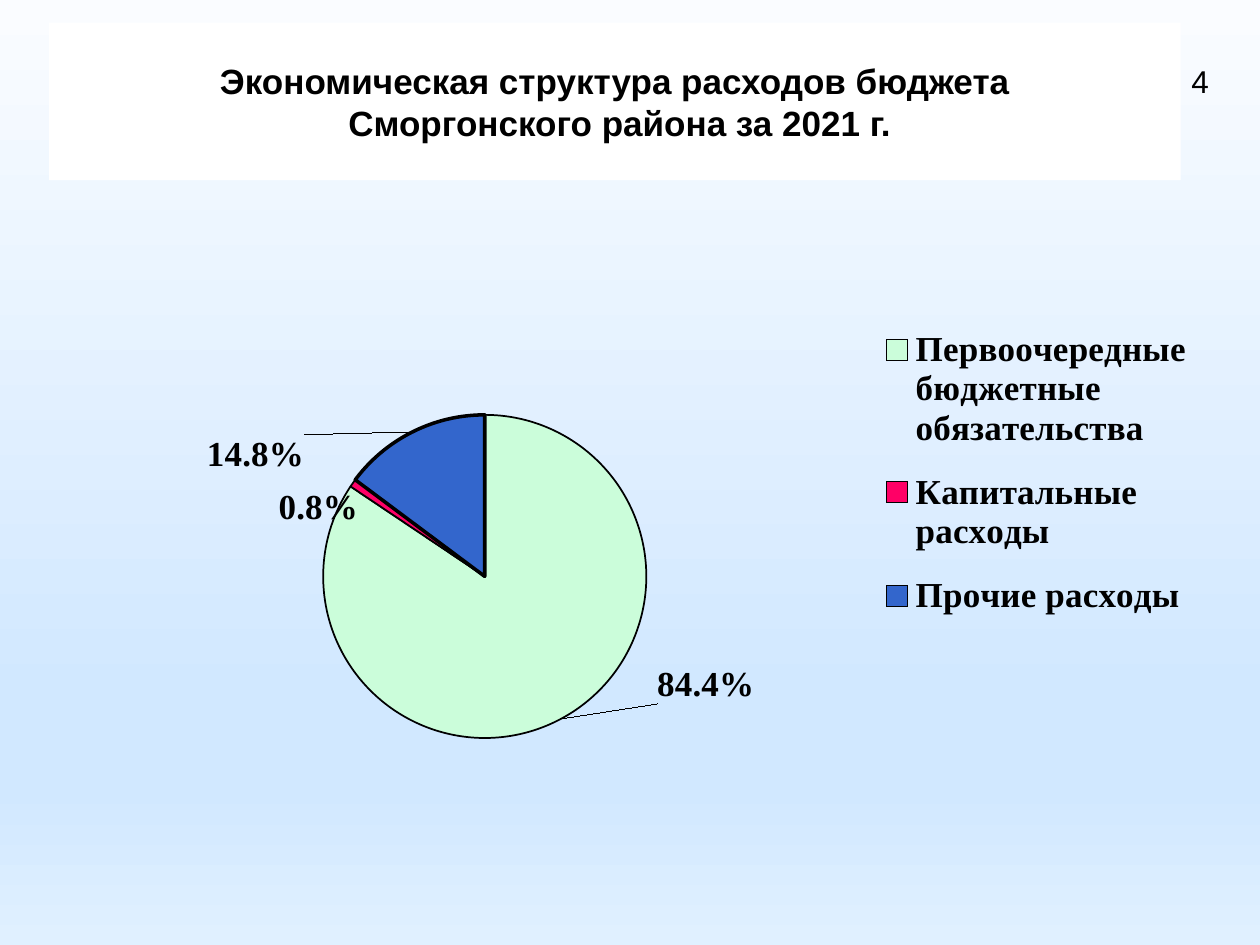
from dataclasses import dataclass

from lxml import etree
from pptx import Presentation
from pptx.chart.data import CategoryChartData
from pptx.dml.color import RGBColor
from pptx.enum.chart import XL_CHART_TYPE, XL_LABEL_POSITION, XL_LEGEND_POSITION
from pptx.enum.text import MSO_ANCHOR, PP_ALIGN
from pptx.oxml.ns import qn
from pptx.util import Inches, Pt

PIE = XL_CHART_TYPE.PIE
OUTSIDE = XL_LABEL_POSITION.OUTSIDE_END
RIGHT = XL_LEGEND_POSITION.RIGHT
CENTER = PP_ALIGN.CENTER
MIDDLE = MSO_ANCHOR.MIDDLE


@dataclass(frozen=True)
class Theme:
    black: str = "000000"
    white: str = "FFFFFF"
    sky: tuple = ((0, "FAFCFF"), (74, "D1E8FF"), (83, "D1E8FF"), (100, "E0F0FF"))
    sans: str = "Arial"
    serif: str = "Times New Roman"
    chart_font: str = "Calibri"
    large: int = 20
    normal: int = 18


@dataclass(frozen=True)
class Slice:
    name: str
    value: float
    color: str
    line: float
    shift: tuple  # label offset as fractions of the chart


THEME = Theme()
SLICES = (
    Slice("Первоочередные бюджетные обязательства", 84.4, "CBFDDA", 1, (0.08, -0.1)),
    Slice("Капитальные расходы", 0.8, "FF0066", 1, (0.01, 0.08)),
    Slice("Прочие расходы", 14.8, "3366CC", 2, (-0.09, 0.08)),
)


def rgb(value: str) -> RGBColor:
    return RGBColor.from_string(value)


def set_font(font, name: str, size: int, bold: bool) -> None:
    for key, value in {"name": name, "size": Pt(size), "bold": bold}.items():
        setattr(font, key, value)
    font.color.rgb = rgb(THEME.black)


def place(shape, left: float, top: float, width: float, height: float) -> None:
    box = {"left": left, "top": top, "width": width, "height": height}
    for key, value in box.items():
        setattr(shape, key, Inches(value))


def write(tf, lines: tuple, size: int, bold: bool) -> None:
    p = tf.paragraphs[0]
    p.alignment = CENTER
    for i, line in enumerate(lines):
        if i:
            p.add_line_break()
        r = p.add_run()
        r.text = line
        set_font(r.font, THEME.sans, size, bold)


def paint_background(s) -> None:
    s.background.fill.gradient()
    stops = next(s._element.iter(qn("a:gsLst")))
    for stop in list(stops):
        stops.remove(stop)
    for pos, color in THEME.sky:
        gs = etree.SubElement(stops, qn("a:gs"), pos=str(pos * 1000))
        etree.SubElement(gs, qn("a:srgbClr"), val=color)
    s._element.find(".//" + qn("a:lin")).set("ang", "5400000")


def make_layout(**values) -> etree._Element:
    layout = etree.Element(qn("c:layout"))
    manual = etree.SubElement(layout, qn("c:manualLayout"))
    for key, value in values.items():
        etree.SubElement(manual, qn("c:" + key), val=str(value))
    return layout


def format_slice(series, i: int, part: Slice) -> None:
    point = series.points[i]
    point.format.fill.solid()
    point.format.fill.fore_color.rgb = rgb(part.color)
    point.format.line.color.rgb = rgb(THEME.black)
    point.format.line.width = Pt(part.line)
    label = point.data_label
    set_font(label.font, THEME.serif, THEME.large, True)
    label.position = OUTSIDE
    # Offset, number format and percentage of this label
    node = series._element.findall(".//" + qn("c:dLbl"))[i]
    node.insert(1, make_layout(x=part.shift[0], y=part.shift[1]))
    number = etree.Element(qn("c:numFmt"), formatCode="0.0%", sourceLinked="0")
    node.insert(2, number)
    node.find(qn("c:showVal")).set("val", "0")
    node.find(qn("c:showPercent")).set("val", "1")


def add_pie(s) -> None:
    data = CategoryChartData()
    data.categories = [part.name for part in SLICES]
    data.add_series("Series 1", [part.value for part in SLICES])
    box = [Inches(v) for v in (0.39, 2.18, 9.22, 4.84)]
    chart = s.shapes.add_chart(PIE, *box, data).chart
    chart.has_title = False
    set_font(chart.font, THEME.chart_font, THEME.normal, True)
    plot = chart.plots[0]
    plot.vary_by_categories = True
    series = plot.series[0]

    # Labels shared by the series, then each slice
    labels = series.data_labels
    formats = {"show_percentage": True, "show_value": False,
               "number_format": "0.0%", "number_format_is_linked": False,
               "position": OUTSIDE}
    for key, value in formats.items():
        setattr(labels, key, value)
    set_font(labels.font, THEME.serif, THEME.large, True)
    for i, part in enumerate(SLICES):
        format_slice(series, i, part)
    group = series._element.find(qn("c:dLbls"))
    leader = group.find(qn("c:showLeaderLines"))
    if leader is None:
        leader = etree.SubElement(group, qn("c:showLeaderLines"))
    leader.set("val", "1")

    # Legend and plot positions
    chart.has_legend = True
    legend = chart.legend
    legend.position = RIGHT
    legend.include_in_layout = False
    set_font(legend.font, THEME.serif, THEME.large, True)
    area = plot._element.getparent()
    for parent, values in (
        (area, dict(layoutTarget="inner", xMode="edge", yMode="edge",
                    x=0.01, y=0.23, w=0.73, h=0.53)),
        (legend._element, dict(xMode="edge", yMode="edge",
                               x=0.71, y=0.05, w=0.28, h=0.55)),
    ):
        old = parent.find(qn("c:layout"))
        if old is not None:
            parent.remove(old)
        parent.insert(0 if parent is area else 1, make_layout(**values))


def main() -> None:
    prs = Presentation()
    prs.slide_width, prs.slide_height = Inches(10), Inches(7.5)
    s = prs.slides.add_slide(prs.slide_layouts[5])
    paint_background(s)

    # Title
    title = s.shapes.title
    place(title, 0.39, 0.18, 8.98, 1.25)
    title.fill.solid()
    title.fill.fore_color.rgb = rgb(THEME.white)
    title.text_frame.vertical_anchor = MIDDLE
    write(title.text_frame, ("Экономическая структура расходов бюджета",
                             " Сморгонского района за 2021 г."), THEME.large, True)

    add_pie(s)

    # Page number
    number = s.shapes.add_textbox(*[Inches(v) for v in (9.33, 0.44, 0.39, 0.4)])
    number.text_frame.word_wrap = True
    write(number.text_frame, ("4",), THEME.normal, False)

    prs.save("out.pptx")


if __name__ == "__main__":
    main()
